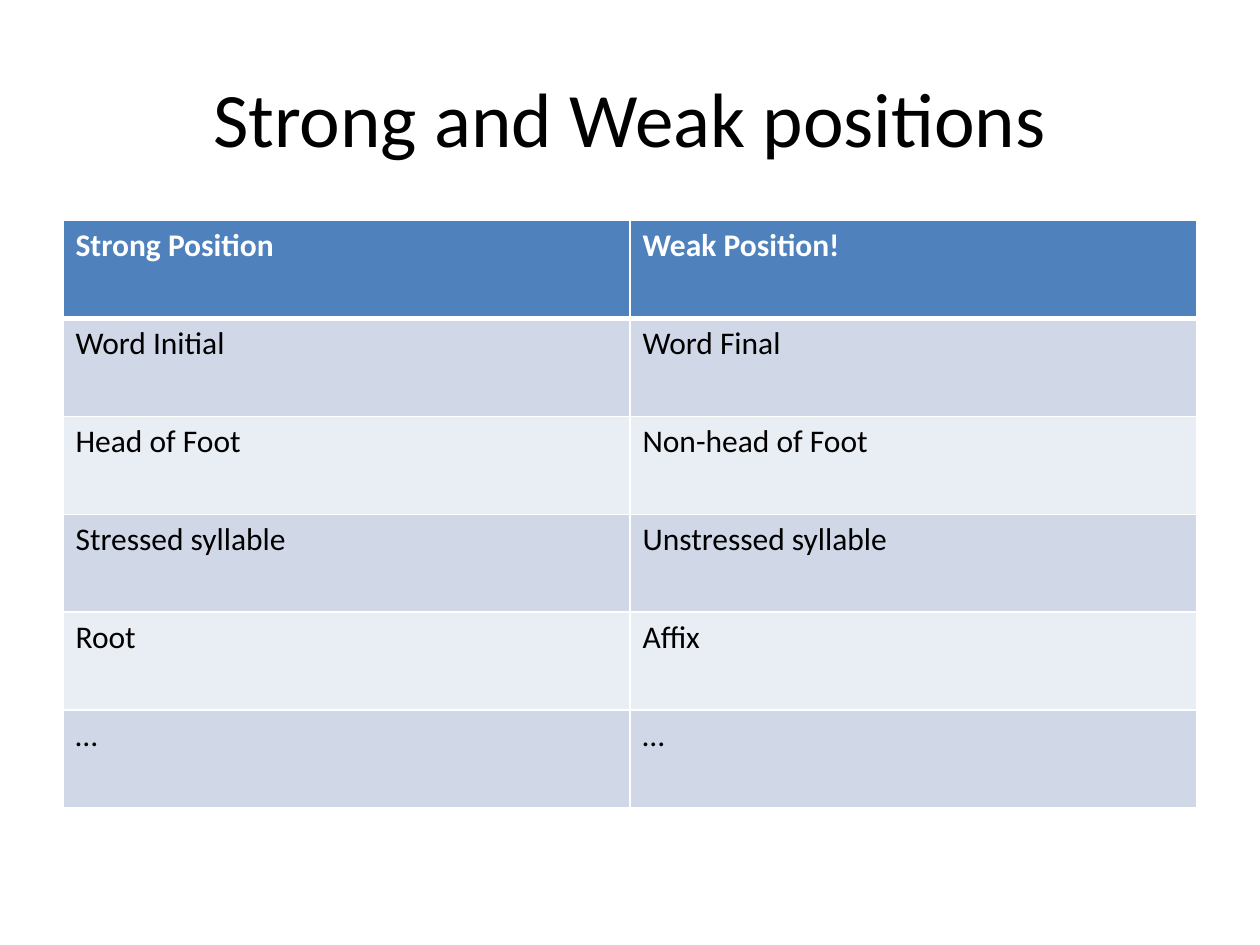
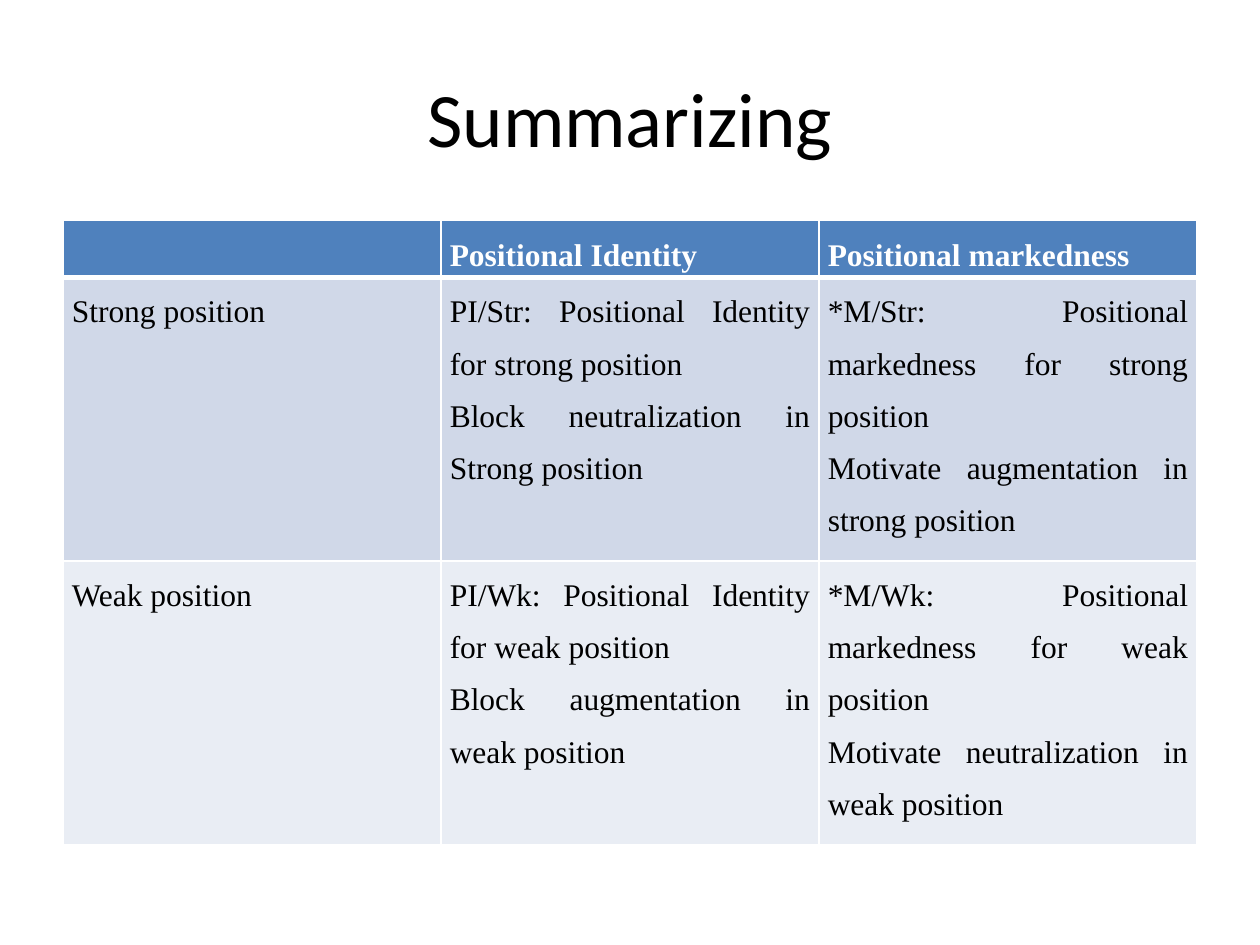
from lxml import etree
from pptx import Presentation
from pptx.dml.color import RGBColor
from pptx.enum.text import MSO_ANCHOR, PP_ALIGN
from pptx.oxml.ns import qn
from pptx.util import Inches, Pt

CENTER, JUSTIFY = PP_ALIGN.CENTER, PP_ALIGN.JUSTIFY
MIDDLE = MSO_ANCHOR.MIDDLE

# The slide is a grid of 20 columns by 30 rows.
COLUMN, ROW = Inches(0.5), Inches(0.25)
LEFT, WIDTH = 1, 18
TITLE_TOP, TITLE_HEIGHT = 1.2, 5
TABLE_TOP = 7

POSITIONS = [
    ("Strong Position", "Weak Position!"),
    ("Word Initial", "Word Final"),
    ("Head of Foot", "Non-head of Foot"),
    ("Stressed syllable", "Unstressed syllable"),
    ("Root", "Affix"),
    ("…", "…"),
]

SUMMARY = [
    ("", "Positional Identity", "Positional markedness"),
    (
        "Strong position",
        "PI/Str: Positional Identity for strong position\n"
        "Block neutralization in Strong position",
        "*M/Str: Positional markedness for strong position\n"
        "Motivate augmentation in strong position",
    ),
    (
        "Weak position",
        "PI/Wk: Positional Identity for weak position\n"
        "Block augmentation in weak position",
        "*M/Wk: Positional markedness for weak position\n"
        "Motivate neutralization in weak position",
    ),
]


def color(hex_string):
    return RGBColor.from_string(hex_string)


def across(columns):
    return int(columns * COLUMN)


def down(rows):
    return int(rows * ROW)


class Deck:
    """Holds the shared style and the slide being filled."""

    font = "Calibri"
    text, header_text, rule = "000000", "FFFFFF", "FFFFFF"
    header_fill = "4F81BD"
    bands = ("D0D8E8", "E9EDF4")
    title_size, body_size = 44, 18
    thin, thick = 1, 3

    def __init__(self):
        self.presentation = Presentation()
        self.presentation.slide_width = across(20)
        self.presentation.slide_height = down(30)
        self.slide = None

    def new_slide(self, title):
        blank = self.presentation.slide_layouts[6]
        self.slide = self.presentation.slides.add_slide(blank)
        heading = self.slide.shapes.add_textbox(
            across(LEFT), down(TITLE_TOP), across(WIDTH), down(TITLE_HEIGHT)
        ).text_frame
        heading.word_wrap = True
        heading.vertical_anchor = MIDDLE
        heading.text = title
        heading.paragraphs[0].alignment = CENTER
        self.set_font(heading, self.font, self.title_size, self.text)

    def set_font(self, frame, name, size, hex_string, bold=False):
        for paragraph in frame.paragraphs:
            paragraph.font.name = name
            paragraph.font.size = Pt(size)
            paragraph.font.bold = bold
            paragraph.font.color.rgb = color(hex_string)

    def table(self, content, row_heights, font=font, spaced=False):
        """Add a banded table; spaced text is justified on 1.5 lines."""
        columns = len(content[0])
        grid = self.slide.shapes.add_table(
            len(content), columns, across(LEFT), down(TABLE_TOP),
            across(WIDTH), down(sum(row_heights)),
        ).table
        for column in grid.columns:
            column.width = across(WIDTH / columns)
        for r, (entries, height) in enumerate(zip(content, row_heights)):
            grid.rows[r].height = down(height)
            for c, entry in enumerate(entries):
                cell = grid.cell(r, c)
                cell.text_frame.text = entry
                self.style_cell(cell, r, font)
                if spaced and entry:
                    self.space_cell(cell)

    def style_cell(self, cell, r, font):
        header = r == 0
        cell.fill.solid()
        cell.fill.fore_color.rgb = color(
            self.header_fill if header else self.bands[(r - 1) % 2]
        )
        self.set_font(
            cell.text_frame, font, self.body_size,
            self.header_text if header else self.text, bold=header,
        )
        top = self.thick if r == 1 else self.thin
        bottom = self.thick if header else self.thin
        self.borders(cell, L=self.thin, R=self.thin, T=top, B=bottom)

    def space_cell(self, cell):
        cell.margin_left = cell.margin_right = Inches(0.07)
        cell.margin_top = cell.margin_bottom = 0
        for paragraph in cell.text_frame.paragraphs:
            paragraph.alignment = JUSTIFY
            paragraph.line_spacing = 1.5

    def borders(self, cell, **widths):
        """Draw each side, which must come before the fill in the cell XML."""
        properties = cell._tc.get_or_add_tcPr()
        for place, (side, width) in enumerate(widths.items()):
            line = etree.Element(qn(f"a:ln{side}"), w=str(Pt(width)))
            fill = etree.SubElement(line, qn("a:solidFill"))
            etree.SubElement(fill, qn("a:srgbClr"), val=self.rule)
            properties.insert(place, line)


def main():
    deck = Deck()
    deck.new_slide("Strong and Weak positions")
    deck.table(POSITIONS, [3.11] * len(POSITIONS))
    deck.new_slide("Summarizing")
    deck.table(SUMMARY, [1.64, 8.3, 8.3], "Times New Roman", spaced=True)
    deck.presentation.save("out.pptx")


if __name__ == "__main__":
    main()
